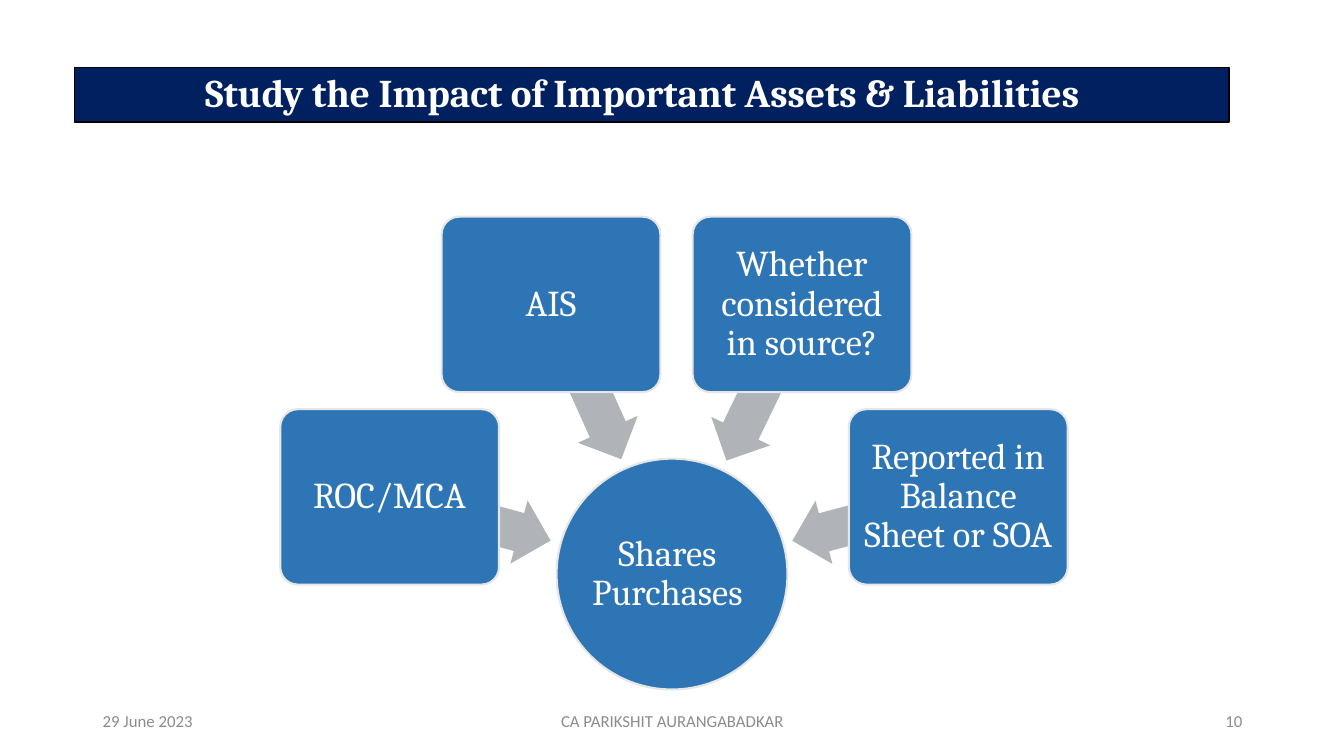
from pptx import Presentation
from pptx.dml.color import RGBColor
from pptx.enum.shapes import MSO_SHAPE as SHAPE
from pptx.enum.text import MSO_ANCHOR as ANCHOR, PP_ALIGN as ALIGN
from pptx.util import Inches, Pt

NAVY = RGBColor(0x00, 0x20, 0x60)
BLUE = RGBColor(0x2E, 0x75, 0xB6)
SILVER = RGBColor(0xB0, 0xB4, 0xB9)
PALE = RGBColor(0xE7, 0xE6, 0xE6)
GREY = RGBColor(0x8C, 0x8C, 0x8C)
WHITE = RGBColor(0xFF, 0xFF, 0xFF)
BLACK = RGBColor(0x00, 0x00, 0x00)

deck = Presentation()
deck.slide_width, deck.slide_height = Inches(13.33), Inches(7.5)
slide = deck.slides.add_slide(deck.slide_layouts[6])


def add_block(kind, place, fill, line=None, line_width=1.5):
    block = slide.shapes.add_shape(kind, *map(Inches, place))
    block.shadow.inherit = False
    block.fill.solid()
    block.fill.fore_color.rgb = fill
    if line is None:
        block.line.fill.background()
    else:
        block.line.color.rgb = line
        block.line.width = Pt(line_width)
    return block


def write(holder, words, size, font, color, align=ALIGN.CENTER, left=0.1, right=0.1, spacing=0.9):
    frame = holder.text_frame
    frame.text = words
    frame.word_wrap = True
    frame.vertical_anchor = ANCHOR.MIDDLE
    frame.margin_left, frame.margin_right = Inches(left), Inches(right)
    frame.margin_top = frame.margin_bottom = Inches(0.05)
    line = frame.paragraphs[0]
    line.alignment = align
    line.line_spacing = spacing
    run = line.runs[0]
    run.font.size = Pt(size)
    run.font.name = font
    run.font.color.rgb = color
    return run


title = add_block(SHAPE.RECTANGLE, (0.74, 0.67, 11.45, 0.54), NAVY, BLACK, 1)
write(title, "Study the Impact of Important Assets & Liabilities", 28, "Cambria", WHITE,
      right=0.29).font.bold = True

hub = add_block(SHAPE.OVAL, (5.52, 4.55, 2.29, 2.29), BLUE, PALE)
write(hub, "Shares Purchases", 26, "Cambria", WHITE, left=0, right=0.09)

BOX_WIDTH, BOX_HEIGHT, ARROW_HEIGHT = 2.17, 1.74, 0.65
UPPER, LOWER = 2.15, 4.06
checks = [
    ("ROC/MCA", 2.78, LOWER, (3.83, 4.82, 1.66), 195.2),
    ("AIS", 4.38, UPPER, (4.97, 3.46, 1.69), 245.8),
    ("Whether considered in source?", 6.87, UPPER, (6.72, 3.47, 1.72), 295.8),
    ("Reported in Balance Sheet or SOA", 8.42, LOWER, (7.83, 4.82, 1.7), 345),
]
for words, left, top, arrow_place, angle in checks:
    arrow = add_block(SHAPE.LEFT_ARROW, (*arrow_place, ARROW_HEIGHT), SILVER)
    arrow.adjustments[0], arrow.adjustments[1] = 0.6, 0.5
    arrow.rotation = angle
    box = add_block(SHAPE.ROUNDED_RECTANGLE, (left, top, BOX_WIDTH, BOX_HEIGHT), BLUE, PALE)
    box.adjustments[0] = 0.1
    write(box, words, 26, "Cambria", WHITE, left=0.05, right=0.05)

footer = [
    ("29 June 2023", 0.92, 3, ALIGN.LEFT),
    ("CA PARIKSHIT AURANGABADKAR", 4.42, 4.5, ALIGN.CENTER),
    ("10", 9.42, 3, ALIGN.RIGHT),
]
for words, left, width, align in footer:
    note = slide.shapes.add_textbox(Inches(left), Inches(6.95), Inches(width), Inches(0.4))
    write(note, words, 12, "Calibri", GREY, align, spacing=1.0)

deck.save("out.pptx")
